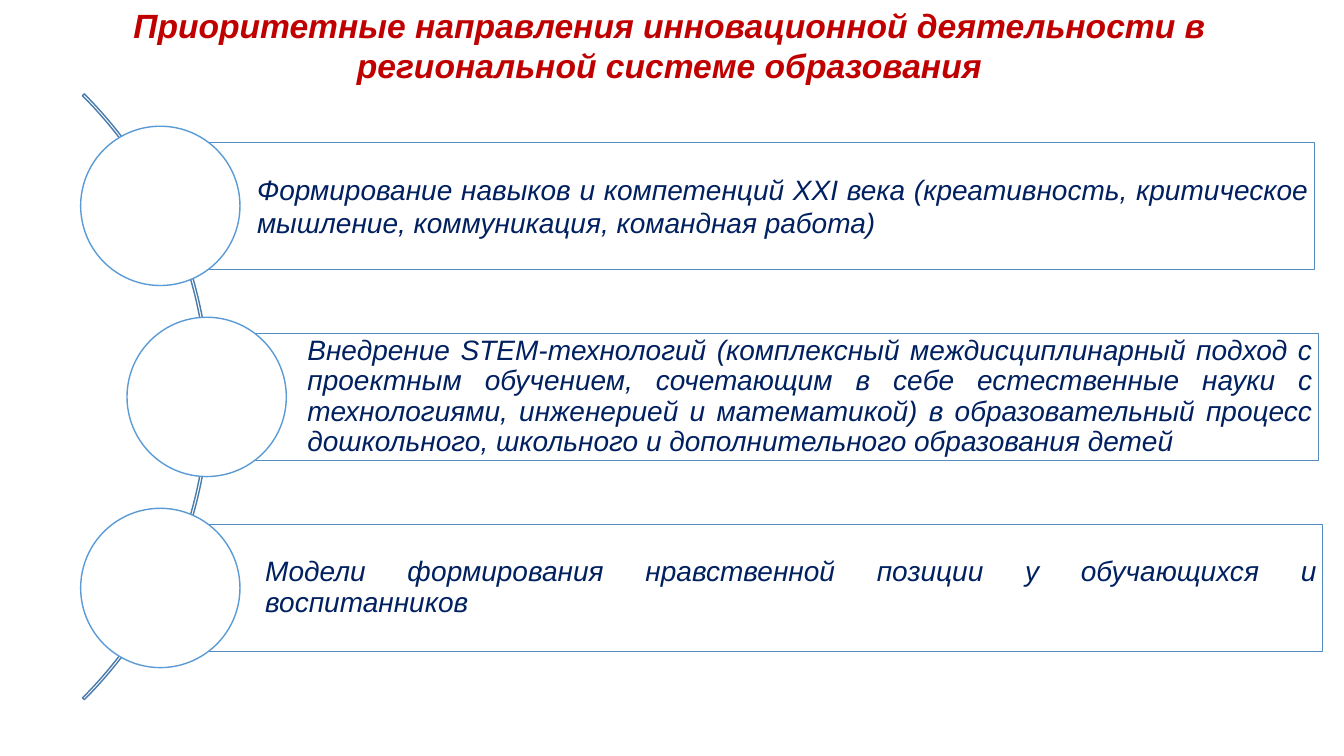
from pptx import Presentation
from pptx.dml.color import RGBColor
from pptx.enum import shapes, text
from pptx.util import Pt

WHITE = RGBColor(0xFF, 0xFF, 0xFF)
RED = RGBColor(0xC0, 0x00, 0x00)
NAVY = RGBColor(0x00, 0x20, 0x60)
ARC_BLUE = RGBColor(0x49, 0x7C, 0xAB)
BAR_BLUE = RGBColor(0x53, 0x8D, 0xC1)
CIRCLE_BLUE = RGBColor(0x5B, 0x9B, 0xD5)

prs = Presentation()
prs.slide_width, prs.slide_height = Pt(960), Pt(540)
slide = prs.slides.add_slide(prs.slide_layouts[6])


def add_outlined(kind, left, top, width, height, line_color):
    shape = slide.shapes.add_shape(kind, Pt(left), Pt(top), Pt(width), Pt(height))
    shape.shadow.inherit = False
    shape.fill.solid()
    shape.fill.fore_color.rgb = WHITE
    shape.line.color.rgb = line_color
    shape.line.width = Pt(1)
    return shape


def write(paragraph, wording, size, color, bold=False):
    run = paragraph.add_run()
    run.text = wording
    run.font.name = "Arial"
    run.font.size = Pt(size)
    run.font.color.rgb = color
    run.font.bold = bold
    run.font.italic = True


# Title
title = slide.shapes.add_textbox(Pt(16.6), Pt(0), Pt(923), Pt(65.5))
title.text_frame.word_wrap = True
heading = title.text_frame.paragraphs[0]
heading.alignment = text.PP_ALIGN.CENTER
write(heading, "Приоритетные направления инновационной деятельности в "
      "региональной системе образования", 24, RED, bold=True)

# Arc behind the circles
MIDDLE, PITCH = 283.5, 136.45
ARC = 612
arc = add_outlined(shapes.MSO_SHAPE.BLOCK_ARC, -462.2, MIDDLE - ARC / 2, ARC, ARC, ARC_BLUE)
arc.fill.background()
for index, value in enumerate((189, 27, 0.003)):
    arc.adjustments[index] = value

# Priorities: bar left, bar width, circle left, line spacing, wording
BAR_HEIGHT, CIRCLE = 90.8, 113.8
priorities = [
    (111.6, 827.3, 57.6, 1.0,
     "Формирование навыков и компетенций XXI века (креативность, критическое "
     "мышление, коммуникация, командная работа)"),
    (147.6, 794.2, 90.7, 0.9,
     "Внедрение STEM-технологий (комплексный междисциплинарный подход с "
     "проектным обучением, сочетающим в себе естественные науки с "
     "технологиями, инженерией и математикой) в образовательный процесс "
     "дошкольного, школьного и дополнительного образования детей"),
    (117.4, 827.3, 57.6, 0.9,
     "Модели формирования нравственной позиции у обучающихся и воспитанников"),
]
for row, (bar_left, bar_width, circle_left, spacing, wording) in enumerate(priorities):
    center = MIDDLE + (row - 1) * PITCH
    bar = add_outlined(shapes.MSO_SHAPE.RECTANGLE, bar_left, center - BAR_HEIGHT / 2,
                       bar_width, BAR_HEIGHT, BAR_BLUE)
    frame = bar.text_frame
    frame.word_wrap = True
    frame.vertical_anchor = text.MSO_ANCHOR.MIDDLE
    frame.margin_left = Pt(72)
    frame.margin_top = frame.margin_right = frame.margin_bottom = Pt(4)
    priority = frame.paragraphs[0]
    priority.alignment = text.PP_ALIGN.JUSTIFY
    priority.line_spacing = spacing
    write(priority, wording, 20, NAVY)
    add_outlined(shapes.MSO_SHAPE.OVAL, circle_left, center - CIRCLE / 2,
                 CIRCLE, CIRCLE, CIRCLE_BLUE)

prs.save("out.pptx")
